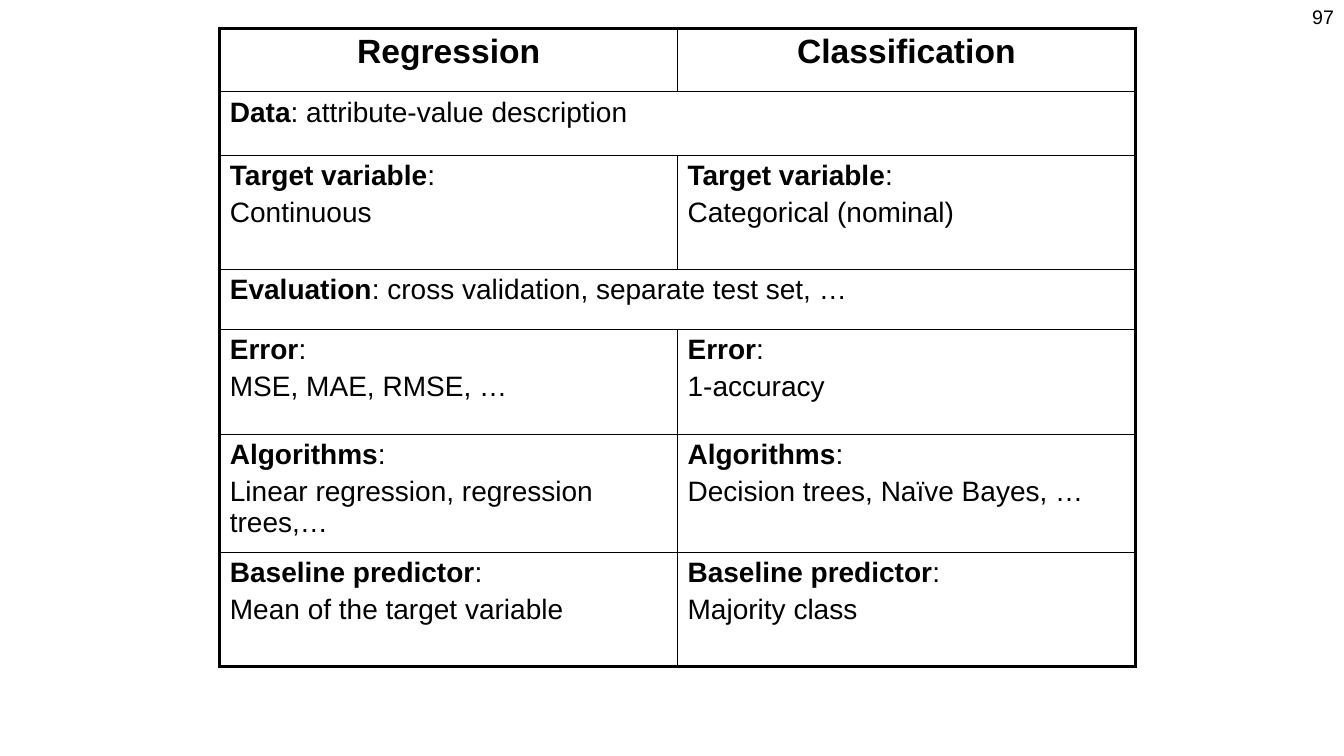
from lxml import etree
from pptx import Presentation
from pptx.dml.color import RGBColor
from pptx.enum import text
from pptx.oxml import ns
from pptx.util import Inches, Pt

BLACK = RGBColor(0x00, 0x00, 0x00)
FONT = "Arial"
THIN, THICK = 1, 2.25

PAGE_NUMBER = "97"
HEADERS = ["Regression", "Classification"]
# Label, then one value per column; a single value spans both columns.
ROWS = [
    ("Data", ["attribute-value description"]),
    ("Target variable", ["Continuous", "Categorical (nominal)"]),
    ("Evaluation", ["cross validation, separate test set, …"]),
    ("Error", ["MSE, MAE, RMSE, …", "1-accuracy"]),
    ("Algorithms", ["Linear regression, regression trees,…",
                    "Decision trees, Naïve Bayes, …"]),
    ("Baseline predictor", ["Mean of the target variable", "Majority class"]),
]
ROW_HEIGHTS = [0.63, 0.63, 1.13, 0.6, 1.04, 1.17, 1.13]
COLUMN_WIDTH = 4.54
TABLE_LEFT, TABLE_TOP = 2.18, 0.28


def add_text(p, content, size=20, bold=False, align=None, before=None):
    r = p.add_run()
    r.text = content
    r.font.name = FONT
    r.font.size = Pt(size)
    r.font.bold = bold
    r.font.color.rgb = BLACK
    if align is not None:
        p.alignment = align
    if before is not None:
        p.space_before = Pt(before)


def set_borders(cell, widths):
    """Draw the left, right, top and bottom edges in the given point widths."""
    tc_pr = cell._tc.get_or_add_tcPr()
    for edge, width in zip(("lnL", "lnR", "lnT", "lnB"), widths):
        ln = etree.SubElement(tc_pr, ns.qn("a:" + edge), w=str(Pt(width)))
        fill = etree.SubElement(ln, ns.qn("a:solidFill"))
        etree.SubElement(fill, ns.qn("a:srgbClr"), val=str(BLACK))


def add_comparison_table(slide):
    n_rows, n_cols = len(ROW_HEIGHTS), len(HEADERS)
    frame = slide.shapes.add_table(
        n_rows, n_cols, Inches(TABLE_LEFT), Inches(TABLE_TOP),
        Inches(n_cols * COLUMN_WIDTH), Inches(sum(ROW_HEIGHTS)))
    table = frame.table
    table.horz_banding = False
    for column in table.columns:
        column.width = Inches(COLUMN_WIDTH)

    for i, height in enumerate(ROW_HEIGHTS):
        table.rows[i].height = Inches(height)
        for j in range(n_cols):
            cell = table.cell(i, j)
            spans = i > 0 and len(ROWS[i - 1][1]) == 1
            set_borders(cell, (
                THICK if j == 0 else THIN,
                THICK if spans or j == n_cols - 1 else THIN,
                THICK if i == 0 else THIN,
                THICK if i == n_rows - 1 else THIN))
            cell.fill.background()

    for j, header in enumerate(HEADERS):
        add_text(table.cell(0, j).text_frame.paragraphs[0], header, size=24,
                 bold=True, align=text.PP_ALIGN.CENTER)

    for i, (label, values) in enumerate(ROWS, start=1):
        spans = len(values) == 1
        if spans:
            table.cell(i, 0).merge(table.cell(i, n_cols - 1))
        for j, value in enumerate(values):
            tf = table.cell(i, j).text_frame
            p = tf.paragraphs[0]
            add_text(p, label, bold=True)
            if spans:
                add_text(p, ": " + value)
            else:
                add_text(p, ":")
                add_text(tf.add_paragraph(), value, before=4)


def add_page_number(slide):
    box = slide.shapes.add_textbox(Inches(10.22), 0, Inches(3.11), Inches(0.52))
    tf = box.text_frame
    tf.word_wrap = True
    add_text(tf.paragraphs[0], PAGE_NUMBER, size=14, align=text.PP_ALIGN.RIGHT)


def main():
    prs = Presentation()
    prs.slide_width, prs.slide_height = Inches(13.33), Inches(7.5)
    slide = prs.slides.add_slide(prs.slide_layouts[6])
    add_page_number(slide)
    add_comparison_table(slide)
    prs.save("out.pptx")


if __name__ == "__main__":
    main()
